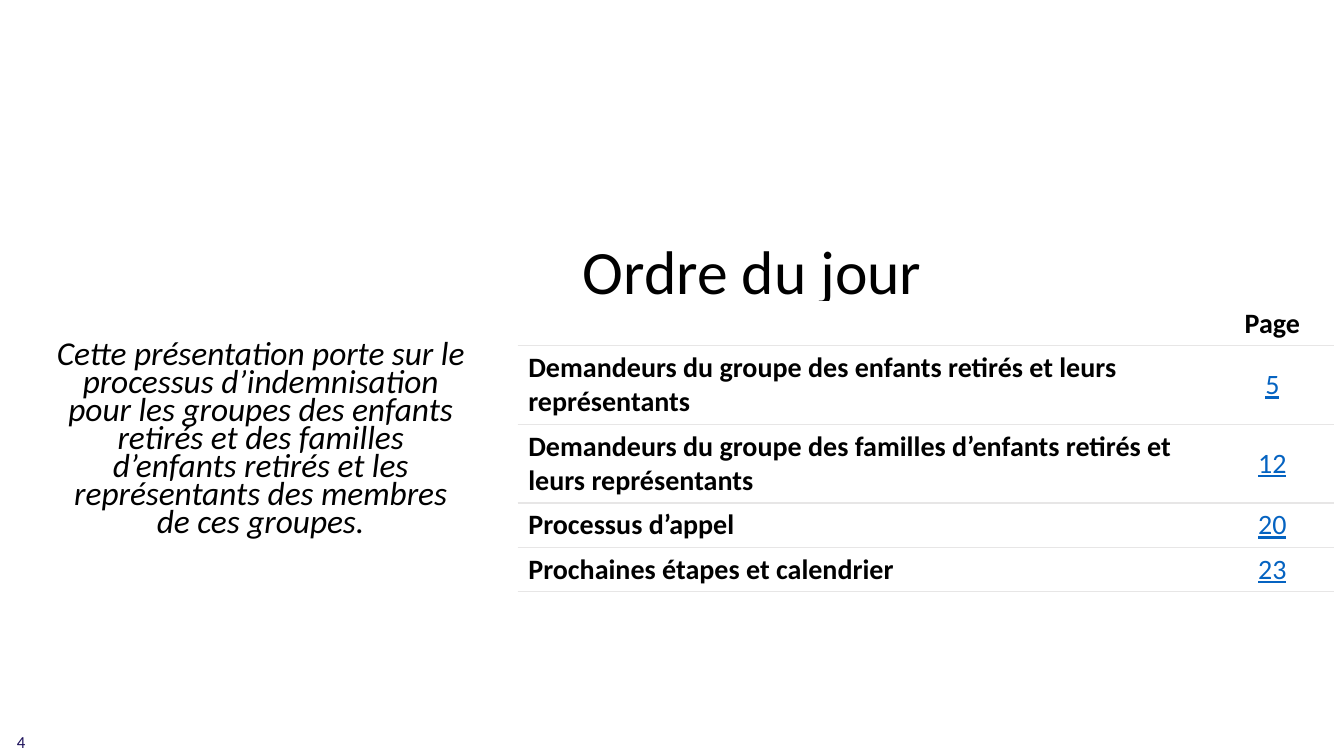
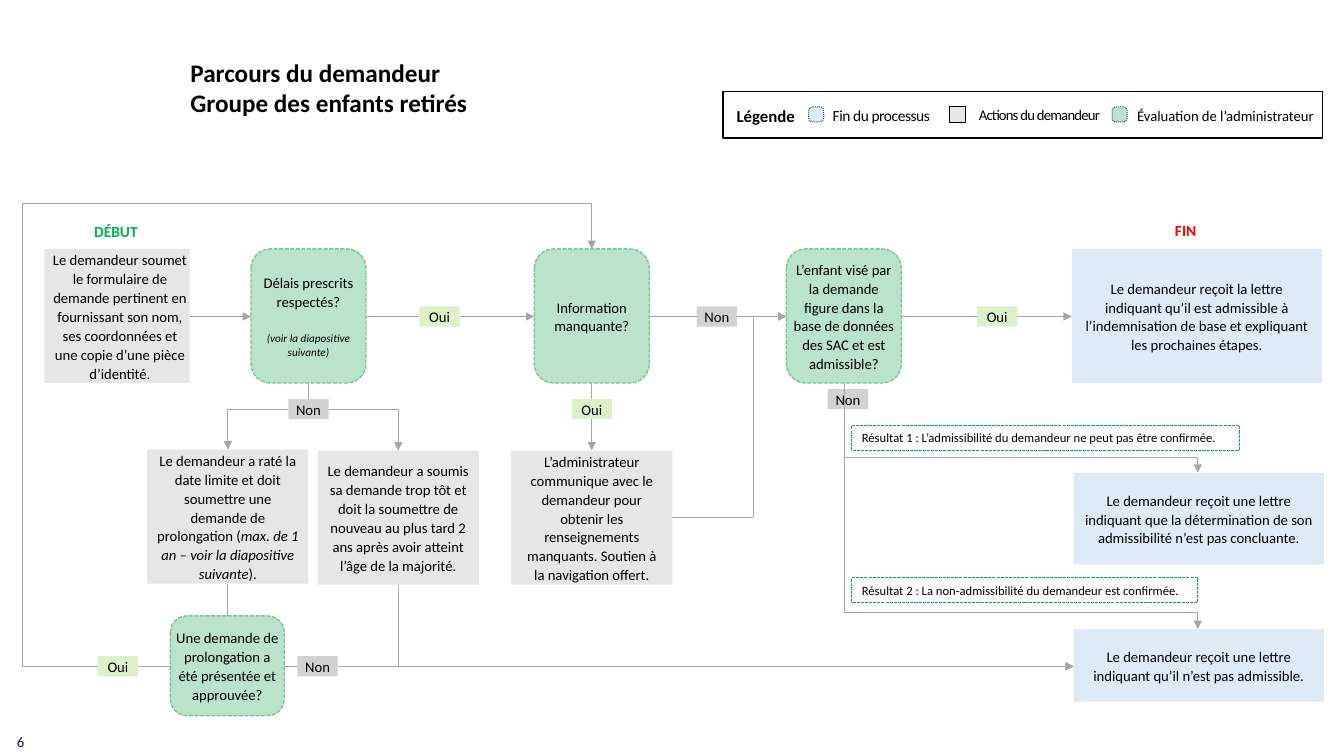
"""Build the agenda slide and the claimant flowchart slide."""
from dataclasses import dataclass, replace
from typing import Any, NamedTuple, Optional

import pptx
import pptx.dml.color
import pptx.enum.dml
import pptx.enum.shapes
import pptx.enum.text
import pptx.oxml
import pptx.oxml.ns
import pptx.util
from pptx.util import Inches

ALIGN = pptx.enum.text.PP_ALIGN
ANCHOR = pptx.enum.text.MSO_ANCHOR
DASH = pptx.enum.dml.MSO_LINE
SHAPE = pptx.enum.shapes.MSO_SHAPE
STRAIGHT = pptx.enum.shapes.MSO_CONNECTOR.STRAIGHT


class Theme:
    font = "Calibri"
    black, white, navy = "000000", "FFFFFF", "1B0F59"
    gray, line_gray, mid_gray = "E7E6E6", "A6A6A6", "A6A6A6"
    pale_blue, dark_blue, link = "DEEBF7", "1F4E79", "0563C1"
    mint, lime, green, red = "78C697", "BCE395", "00B050", "FF0000"
    title, subtitle, table, heading = 44, 23.8, 20, 18
    legend, marker, body, result, note = 12, 11, 10.5, 9, 8


class Area(NamedTuple):
    left: float
    top: float
    width: float
    height: float


class Insets(NamedTuple):
    left: float = 0.1
    top: float = 0.05
    right: float = 0.1
    bottom: float = 0.05


@dataclass(frozen=True)
class Style:
    size: float = Theme.body
    color: str = Theme.black
    bold: bool = False
    italic: bool = False
    underline: bool = False
    align: Any = ALIGN.LEFT
    spacing: float = 1.0
    before: float = 0
    tracking: float = 0


@dataclass(frozen=True)
class Look:
    fill: Optional[str] = None
    alpha: int = 100
    outline: Optional[str] = None
    weight: float = 1
    dash: Any = None
    shape: Any = SHAPE.RECTANGLE
    rounding: Optional[float] = None
    insets: Insets = Insets()


class Node(NamedTuple):
    area: Area
    look: Look
    text: str
    note: str = ""


class Route(NamedTuple):
    points: tuple[tuple[float, float], ...]
    arrow: bool = True


class Label(NamedTuple):
    area: Area
    text: str
    style: Style


CENTERED = Style(align=ALIGN.CENTER, spacing=1.07)
NOTE = replace(CENTERED, size=Theme.note, italic=True, before=14)
FLUSH = Insets(0, 0, 0, 0)
ACTION = Look(Theme.gray)
START = replace(ACTION, insets=Insets(0.06, 0, 0, 0))
END = Look(Theme.pale_blue)
REVIEW = Look(Theme.mint, 50, Theme.mint, 1, DASH.SQUARE_DOT, SHAPE.ROUNDED_RECTANGLE, insets=FLUSH)
YES = Look(Theme.lime, 50, insets=FLUSH)
NO = Look(Theme.mid_gray, 50, insets=FLUSH)
RESULT = Look(outline=Theme.green, weight=0.75, dash=DASH.SQUARE_DOT)
KEY_REVIEW = Look(Theme.mint, 50, Theme.dark_blue, 0.75, DASH.ROUND_DOT, SHAPE.ROUNDED_RECTANGLE, 0.25)
KEY_END = replace(KEY_REVIEW, fill=Theme.pale_blue, alpha=100)
KEY_ACTION = Look(Theme.gray, outline=Theme.black, weight=0.5)

TOP, TALL, ROW = 2.47, 1.33, 3.14
BRANCH, LOWER, BASE = 4.06, 4.47, 6.61
NODES = (
    Node(Area(0.44, TOP, 1.44, TALL), START, "Le demandeur soumet le formulaire de demande pertinent en fournissant son nom, ses coordonnées et une copie d’une pièce d’identité."),
    Node(Area(2.49, TOP, 1.14, TALL), REVIEW, "Délais prescrits respectés?", "(voir la diapositive suivante)"),
    Node(Area(5.3, TOP, 1.14, TALL), REVIEW, "Information manquante?"),
    Node(Area(7.8, TOP, 1.14, TALL), REVIEW, "L’enfant visé par la demande figure dans la base de données des SAC et est admissible?"),
    Node(Area(10.63, TOP, 2.48, TALL), END, "Le demandeur reçoit la lettre indiquant qu’il est admissible à l’indemnisation de base et expliquant les prochaines étapes."),
    Node(Area(1.46, 4.46, 1.6, TALL), ACTION, "Le demandeur a raté la date limite et doit soumettre une demande de prolongation (*max. de 1 an – voir la diapositive suivante*)."),
    Node(Area(3.15, LOWER, 1.6, TALL), ACTION, "Le demandeur a soumis sa demande trop tôt et doit la soumettre de nouveau au plus tard 2 ans après avoir atteint l’âge de la majorité."),
    Node(Area(5.07, LOWER, 1.6, TALL), ACTION, "L’administrateur communique avec le demandeur pour obtenir les renseignements manquants. Soutien à la navigation offert."),
    Node(Area(1.69, 6.11, 1.13, 0.99), REVIEW, "Une demande de prolongation a été présentée et approuvée?"),
    Node(Area(10.65, 4.69, 2.48, 0.91), END, "Le demandeur reçoit une lettre indiquant que la détermination de son admissibilité n’est pas concluante."),
    Node(Area(10.65, 6.24, 2.48, 0.72), END, "Le demandeur reçoit une lettre indiquant qu’il n’est pas admissible."),
)
ROUTES = (
    Route(((1.88, ROW), (2.49, ROW))),
    Route(((3.63, ROW), (4.16, ROW)), False),
    Route(((4.56, ROW), (5.3, ROW))),
    Route(((6.44, ROW), (6.91, ROW)), False),
    Route(((7.31, ROW), (7.8, ROW))),
    Route(((8.94, ROW), (9.69, ROW)), False),
    Route(((10.09, ROW), (10.63, ROW))),
    Route(((3.06, 3.8), (3.06, 3.96)), False),
    Route(((2.86, BRANCH), (2.26, BRANCH), (2.26, 4.46))),
    Route(((3.26, BRANCH), (3.95, BRANCH), (3.95, LOWER))),
    Route(((5.87, 3.8), (5.87, 3.96)), False),
    Route(((5.87, 4.16), (5.87, LOWER))),
    Route(((6.67, 5.13), (7.47, 5.13), (7.47, ROW), (7.8, ROW))),
    Route(((2.26, 5.79), (2.26, 6.11)), False),
    Route(((2.82, BASE), (2.95, BASE)), False),
    Route(((3.35, BASE), (10.65, BASE))),
    Route(((3.95, 5.8), (3.95, BASE), (10.65, BASE))),
    Route(((1.69, BASE), (1.37, BASE)), False),
    Route(((0.97, BASE), (0.22, BASE), (0.22, 2.02), (5.87, 2.02), (5.87, TOP))),
    Route(((8.37, 3.8), (8.37, 4.54), (11.88, 4.54), (11.88, 4.69))),
    Route(((8.37, 3.8), (8.37, 6.08), (11.88, 6.08), (11.88, 6.24))),
)
YES_TAGS = ((4.16, 3.04), (9.69, 3.04), (5.67, 3.96), (0.97, 6.51))
NO_TAGS = ((6.91, 3.04), (2.86, 3.96), (8.21, 3.86), (2.95, 6.51))
RESULTS = (
    Node(Area(8.45, 4.22, 3.84, 0.25), RESULT, "Résultat 1 : L’admissibilité du demandeur ne peut pas être confirmée."),
    Node(Area(8.45, 5.73, 3.43, 0.25), RESULT, "Résultat 2 : La non-admissibilité du demandeur est confirmée."),
)
MARKER = Style(Theme.marker, Theme.green, bold=True, align=ALIGN.CENTER)
MARKERS = (
    Label(Area(0.55, 2.15, 1.2, 0.29), "DÉBUT", MARKER),
    Label(Area(11.16, 2.14, 1.2, 0.29), "FIN", replace(MARKER, color=Theme.red)),
)
LEGEND_KEYS = ((8.02, KEY_END), (9.42, KEY_ACTION), (11.03, KEY_REVIEW))
LEGEND_LABELS = (
    Label(Area(7.17, 1, 0.85, 0.3), "Légende", Style(Theme.legend, bold=True, align=ALIGN.CENTER)),
    Label(Area(8.16, 1, 1.18, 0.29), "Fin du processus", Style(Theme.marker, tracking=-0.3)),
    Label(Area(9.61, 1, 1.43, 0.28), "Actions du demandeur", Style(tracking=-0.5)),
    Label(Area(11.18, 1.01, 2.15, 0.28), "Évaluation de l’administrateur", Style()),
)
AGENDA = (
    ("", "Page", 0.44),
    ("Demandeurs du groupe des enfants retirés et leurs représentants", "5", 0.78),
    ("Demandeurs du groupe des familles d’enfants retirés et leurs représentants", "12", 0.78),
    ("Processus d’appel", "20", 0.44),
    ("Prochaines étapes et calendrier", "23", 0.44),
)


def rgb(value: str) -> pptx.dml.color.RGBColor:
    return pptx.dml.color.RGBColor.from_string(value)


def element(xml: str) -> Any:
    head, rest = xml.split(" ", 1)
    return pptx.oxml.parse_xml(f'{head} {pptx.oxml.ns.nsdecls("a")} {rest}')


def place(area: Area) -> tuple[int, ...]:
    return tuple(Inches(length) for length in area)


def write(para: Any, text: str, style: Style) -> None:
    if "*" in text:
        for index, part in enumerate(text.split("*")):
            span = para.add_run()
            span.text = part
            span.font.italic = index % 2 == 1
    else:
        para.text = text
    para.alignment = style.align
    para.line_spacing = style.spacing
    if style.before:
        para.space_before = pptx.util.Pt(style.before)
    font = para.font
    font.name, font.size = Theme.font, pptx.util.Pt(style.size)
    font.bold, font.underline = style.bold, style.underline
    if "*" not in text:
        font.italic = style.italic
    font.color.rgb = rgb(style.color)
    if style.tracking:
        for span in para.runs:
            span._r.get_or_add_rPr().set("spc", str(round(style.tracking * 100)))


def frame_up(frame: Any, insets: Insets, anchor: Any) -> None:
    frame.word_wrap = True
    frame.vertical_anchor = anchor
    frame.margin_left, frame.margin_top, frame.margin_right, frame.margin_bottom = map(Inches, insets)


def add_label(shapes: Any, label: Label, anchor: Any = ANCHOR.MIDDLE) -> None:
    box = shapes.add_textbox(*place(label.area))
    frame_up(box.text_frame, Insets(), anchor)
    write(box.text_frame.paragraphs[0], label.text, label.style)


def add_box(shapes: Any, area: Area, look: Look) -> Any:
    box = shapes.add_shape(look.shape, *place(area))
    box.shadow.inherit = False
    if look.rounding is not None:
        box.adjustments[0] = look.rounding
    if look.fill:
        box.fill.solid()
        box.fill.fore_color.rgb = rgb(look.fill)
        if look.alpha < 100:
            color = box._element.spPr.find(".//" + pptx.oxml.ns.qn("a:srgbClr"))
            color.append(element(f'<a:alpha val="{look.alpha * 1000}"/>'))
    else:
        box.fill.background()
    if look.outline:
        box.line.color.rgb = rgb(look.outline)
        box.line.width = pptx.util.Pt(look.weight)
        if look.dash:
            box.line.dash_style = look.dash
    else:
        box.line.fill.background()
    return box


def add_node(shapes: Any, node: Node, style: Style = CENTERED, anchor: Any = ANCHOR.MIDDLE) -> None:
    frame = add_box(shapes, node.area, node.look).text_frame
    frame_up(frame, node.look.insets, anchor)
    write(frame.paragraphs[0], node.text, style)
    if node.note:
        write(frame.add_paragraph(), node.note, NOTE)


def add_route(shapes: Any, route: Route) -> None:
    for start, end in zip(route.points, route.points[1:]):
        line = shapes.add_connector(STRAIGHT, *map(Inches, start + end))
        line.line.color.rgb = rgb(Theme.line_gray)
        line.line.width = pptx.util.Pt(0.5)
        if route.arrow and end == route.points[-1]:
            line.line._get_or_add_ln().append(element('<a:tailEnd type="triangle"/>'))
        line._element.spPr.append(element("<a:effectLst />"))


def add_page(deck: Any, number: str, size: float) -> Any:
    page = deck.slides.add_slide(deck.slide_layouts[6])
    add_label(page.shapes, Label(Area(0.07, 7.2, 3, 0.32), number, Style(size, Theme.navy)))
    return page


def add_cell(cell: Any, text: str, style: Style, anchor: Any, top: str) -> None:
    cell.fill.solid()
    cell.fill.fore_color.rgb = rgb(Theme.white)
    cell.vertical_anchor = anchor
    write(cell.text_frame.paragraphs[0], text, style)
    borders = (("L", Theme.white), ("R", Theme.white), ("T", top), ("B", Theme.gray))
    for index, (side, color) in enumerate(borders):
        cell._tc.get_or_add_tcPr().insert(index, element(
            f'<a:ln{side} w="12700"><a:solidFill><a:srgbClr val="{color}"/></a:solidFill></a:ln{side}>'))


def build_agenda(deck: Any) -> None:
    shapes = add_page(deck, "4", Theme.legend).shapes
    add_label(shapes, Label(Area(5.68, 2.18, 6.99, 1.09), "Ordre du jour", Style(Theme.title, spacing=0.9)))
    add_label(shapes, Label(
        Area(0.46, 3.27, 4.25, 2.21),
        "Cette présentation porte sur le processus d’indemnisation pour les groupes des enfants retirés et des familles d’enfants retirés et les représentants des membres de ces groupes.",
        Style(Theme.subtitle, italic=True, align=ALIGN.CENTER, spacing=0.7)))
    height = sum(row[2] for row in AGENDA)
    table = shapes.add_table(len(AGENDA), 2, *place(Area(5.14, 2.99, 8.09, height))).table
    table.columns[0].width, table.columns[1].width = Inches(6.87), Inches(1.22)
    topic = Style(Theme.table, bold=True)
    header = replace(topic, align=ALIGN.CENTER)
    link = replace(header, bold=False, underline=True, color=Theme.link)
    for index, (text, number, row_height) in enumerate(AGENDA):
        table.rows[index].height = Inches(row_height)
        anchor = ANCHOR.MIDDLE if index else ANCHOR.TOP
        top = Theme.gray if index else Theme.white
        add_cell(table.cell(index, 0), text, topic, anchor, top)
        add_cell(table.cell(index, 1), number, link if index else header, anchor, top)


def build_flowchart(deck: Any) -> None:
    shapes = add_page(deck, "6", Theme.body).shapes
    add_label(shapes, Label(Area(1.79, 0.46, 4.64, 0.81), "Parcours du demandeur\vGroupe des enfants retirés", Style(Theme.heading, bold=True)))
    for node in NODES:
        add_node(shapes, node)
    for route in ROUTES:
        add_route(shapes, route)
    for look, text, spots in ((YES, "Oui", YES_TAGS), (NO, "Non", NO_TAGS)):
        for left, top in spots:
            add_node(shapes, Node(Area(left, top, 0.4, 0.2), look, text))
    for result in RESULTS:
        add_node(shapes, result, Style(Theme.result), ANCHOR.TOP)
    for marker in MARKERS:
        add_label(shapes, marker, ANCHOR.TOP)
    legend = shapes.add_group_shape().shapes
    add_box(legend, Area(7.17, 0.91, 5.95, 0.46), Look(Theme.white, outline=Theme.black))
    for left, look in LEGEND_KEYS:
        add_box(legend, Area(left, 1.06, 0.15, 0.15), look)
    for label in LEGEND_LABELS:
        add_label(legend, label)


def main() -> None:
    deck = pptx.Presentation()
    deck.slide_width, deck.slide_height = Inches(13.33), Inches(7.5)
    build_agenda(deck)
    build_flowchart(deck)
    deck.save("out.pptx")


if __name__ == "__main__":
    main()
